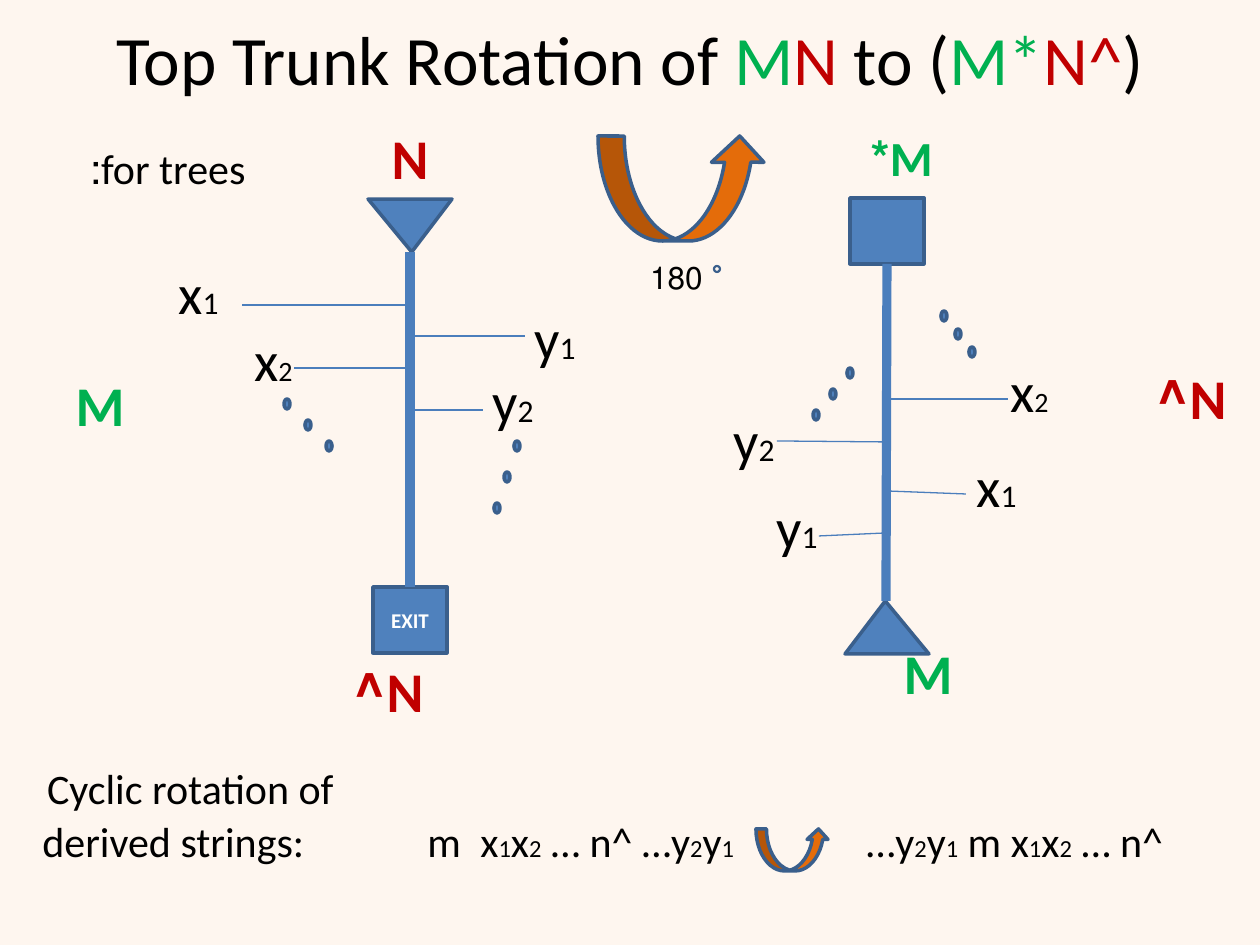
from lxml.etree import SubElement
from pptx import Presentation
from pptx.dml.color import RGBColor
from pptx.enum.shapes import MSO_CONNECTOR, MSO_SHAPE
from pptx.enum.text import MSO_ANCHOR, PP_ALIGN
from pptx.oxml.ns import qn
from pptx.util import Emu, Pt

PX = 914400 // 126
THEME = {
    "font": "Calibri",
    "back": "FEF6EF", "ink": "000000", "white": "FFFFFF",
    "green": "00B050", "red": "C00000", "orange": "E46C0A",
    "blue": "4F81BD", "edge": "3A5F8C", "line": "4B7EBC",
    "title": 39.6, "big": 32, "mid": 28, "text": 24, "sub": 18,
    "small": 16, "tiny": 14, "exit": 12,
}

# Content: text runs are (text, size, colour)
TITLE = [("Top Trunk Rotation of ", "ink"), ("M", "green"), ("N ", "red"),
         ("to (", "ink"), ("M*", "green"), ("N^", "red"), (")", "ink")]

# Derived strings: base and index by turns
STRING = ["derived strings:\tm\tx", "1", "x", "2", " … n^ …y", "2", "y", "1",
          "\t…y", "2", "y", "1", " m x", "1", "x", "2", " … n^"]
TABS = [385, 438, 824]

# Branch labels: base, index, index size, left, top
NAMES = [("x", "1", "sub", 147, 252), ("x", "2", "small", 221, 319),
         ("y", "1", "sub", 504, 297), ("y", "2", "sub", 462, 360),
         ("x", "1", "sub", 945, 445), ("x", "2", "small", 977, 350),
         ("y", "2", "sub", 703, 399), ("y", "1", "sub", 746, 486)]

# Other labels: text, size, colour, bold, box
LABELS = [("N^", "big", "red", True, (1092, 357, 147, 81)),
          ("N^", "big", "red", True, (289, 650, 147, 81)),
          ("N", "big", "red", True, (262, 117, 179, 81)),
          ("M*", "mid", "green", True, (829, 121, 116, 72)),
          ("for trees:", "text", "ink", False, (0, 136, 258, 63)),
          ("180", "sub", "ink", False, (620, 252, 95, 53)),
          ("Cyclic rotation of", "text", "ink", False, (0, 756, 346, 63))]

BRANCHES = [(410, 305, 242, 305), (410, 368, 294, 368),
            (410, 336, 525, 336), (410, 410, 483, 410),
            (777, 441, 888, 442), (819, 536, 885, 533),
            (1008, 399, 887, 399), (966, 494, 887, 491)]

# Dot rows: first left and top, then the step
DOTS = [(284, 399, 21, 21), (514, 441, -10, 31),
        (813, 410, 17, -21), (941, 311, 14, 18)]

ARROWS = [(598, 136, 168, 105), (756, 829, 73, 42)]


def px(*nums):
    return [Emu(num * PX) for num in nums]


def color(name):
    return RGBColor.from_string(THEME[name])


def style(run, size, tint="ink", bold=False):
    run.font.name = THEME["font"]
    run.font.size = Pt(THEME[size])
    run.font.color.rgb = color(tint)
    run.font.bold = bold


def write(para, parts, bold=False):
    for text, size, tint in parts:
        run = para.add_run()
        run.text = text
        style(run, size, tint, bold)


def right(para):
    para.alignment = PP_ALIGN.RIGHT
    para._p.get_or_add_pPr().set("rtl", "1")


def label(slide, box, parts, bold=False):
    frame = slide.shapes.add_textbox(*px(*box)).text_frame
    frame.word_wrap = True
    para = frame.paragraphs[0]
    write(para, parts, bold)
    return para


def draw(slide, kind, box, fill="blue", width=2):
    shape = slide.shapes.add_shape(kind, *px(*box))
    shape.shadow.inherit = False
    if fill:
        shape.fill.solid()
        shape.fill.fore_color.rgb = color(fill)
    else:
        shape.fill.background()
    shape.line.color.rgb = color("edge")
    shape.line.width = Pt(width)
    return shape


def link(slide, ends, width=0.75):
    line = slide.shapes.add_connector(MSO_CONNECTOR.STRAIGHT, *px(*ends))
    line.line.color.rgb = color("line")
    line.line.width = Pt(width)
    SubElement(line.element.spPr, qn("a:effectLst"))
    return line


def place(shape, box):
    shape.left, shape.top, shape.width, shape.height = px(*box)


def main():
    deck = Presentation()
    deck.slide_width, deck.slide_height = px(1260, 945)
    slide = deck.slides.add_slide(deck.slide_layouts[1])
    slide.background.fill.solid()
    slide.background.fill.fore_color.rgb = color("back")

    # Title
    title = slide.shapes.title
    place(title, (63, 0, 1134, 115))
    title.text_frame.vertical_anchor = MSO_ANCHOR.MIDDLE
    write(title.text_frame.paragraphs[0],
          [(text, "title", tint) for text, tint in TITLE])

    # Body: the two M marks
    body = slide.placeholders[1]
    place(body, (63, 364, 1134, 366))
    body.text_frame.text = "M\nM"
    for para, gap, left in zip(body.text_frame.paragraphs, (0, 115), (0, 828)):
        para.space_before = Pt(gap)
        props = para._p.get_or_add_pPr()
        props.set("marL", str(left * PX))
        props.set("indent", "0")
        SubElement(props, qn("a:buNone"))
        style(para.runs[0], "big", "green", True)

    # Trunks with their boxes and triangles
    foot = draw(slide, MSO_SHAPE.RECTANGLE, (373, 587, 74, 66))
    head = draw(slide, MSO_SHAPE.RECTANGLE, (850, 198, 74, 66))
    for box, turn in (((368, 199, 84, 53), 180), ((845, 601, 84, 53), 0)):
        tip = draw(slide, MSO_SHAPE.ISOSCELES_TRIANGLE, box)
        tip.adjustments[0] = 0.48
        tip.rotation = turn
    link(slide, (410, 252, 410, 587), 5.25).end_connect(foot, 0)
    link(slide, (887, 264, 886, 601), 5.25).begin_connect(head, 2)
    foot.text_frame.text = "EXIT"
    foot.text_frame.vertical_anchor = MSO_ANCHOR.MIDDLE
    para = foot.text_frame.paragraphs[0]
    para.alignment = PP_ALIGN.CENTER
    style(para.runs[0], "exit", "white", True)

    # Branches and dots
    for ends in BRANCHES:
        link(slide, ends)
    for left, top, across, down in DOTS:
        for i in range(3):
            draw(slide, MSO_SHAPE.FLOWCHART_CONNECTOR,
                 (left + i * across, top + i * down, 6, 10))

    # Labels
    for base, index, size, left, top in NAMES:
        right(label(slide, (left, top, 84, 81),
                    [(base, "big", "ink"), (index, size, "ink")]))
    for text, size, tint, bold, box in LABELS:
        right(label(slide, box, [(text, size, tint)], bold))

    # Derived strings on tab stops
    sizes = ("text", "tiny")
    para = label(slide, (30, 809, 1147, 63),
                 [(text, sizes[i % 2], "ink") for i, text in enumerate(STRING)])
    stops = SubElement(para._p.get_or_add_pPr(), qn("a:tabLst"))
    for stop in TABS:
        SubElement(stops, qn("a:tab"), pos=str(stop * PX), algn="l")

    # Rotation arrows and degree sign
    for box in ARROWS:
        arrow = draw(slide, MSO_SHAPE.CURVED_DOWN_ARROW, box, "orange")
        arrow.element.spPr.xfrm.set("flipV", "1")
    draw(slide, MSO_SHAPE.OVAL, (714, 266, 6, 6), None, 1.25)

    deck.save("out.pptx")


if __name__ == "__main__":
    main()
